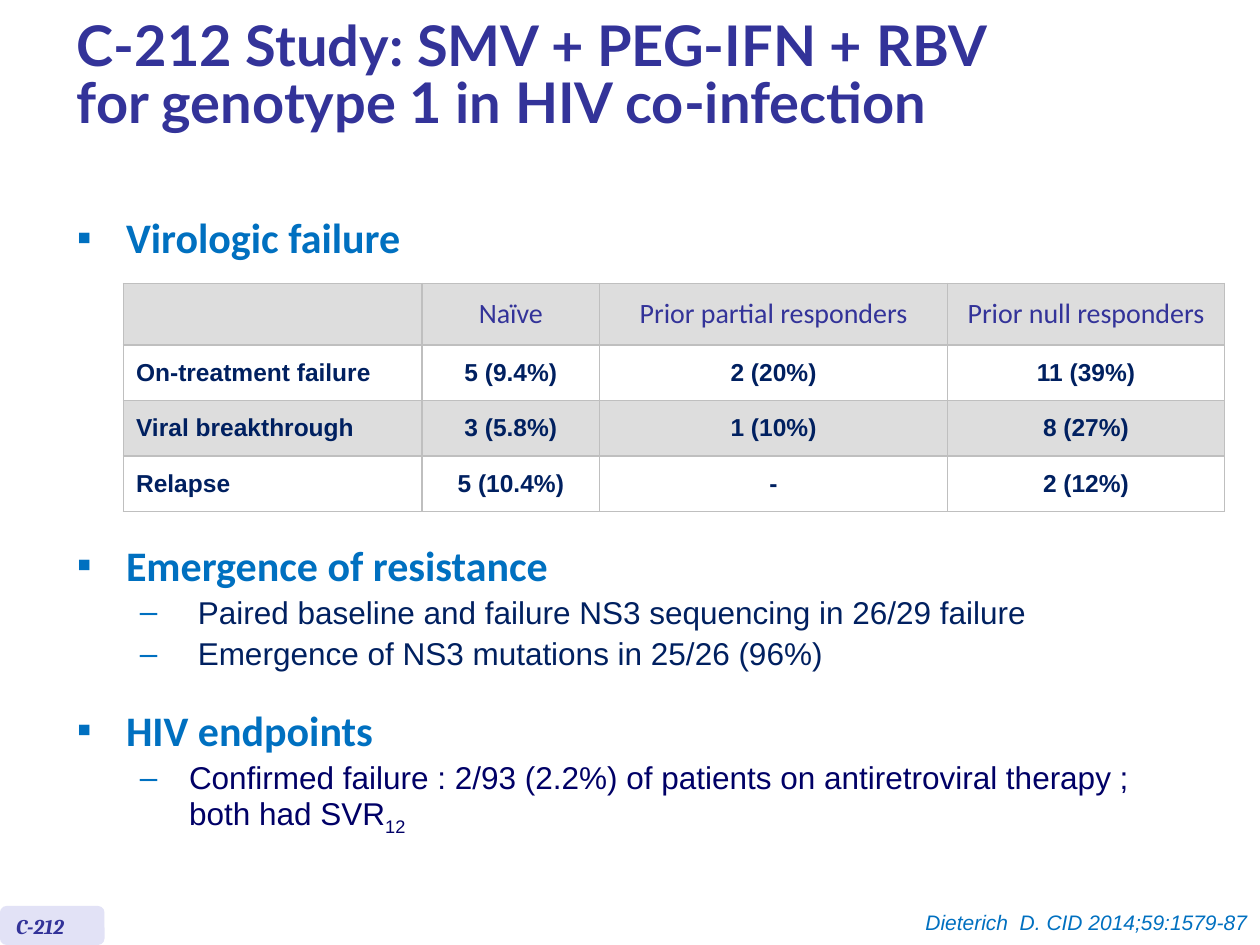
import pptx
import pptx.dml.color
import pptx.enum.shapes
import pptx.enum.text
import pptx.oxml.ns
import pptx.util
from lxml import etree

RGBColor = pptx.dml.color.RGBColor
Inches, Pt = pptx.util.Inches, pptx.util.Pt
ALIGN = pptx.enum.text.PP_ALIGN
ANCHOR = pptx.enum.text.MSO_ANCHOR

INDIGO = RGBColor(0x33, 0x33, 0x99)
BLUE = RGBColor(0x00, 0x70, 0xC0)
NAVY = RGBColor(0x00, 0x20, 0x60)
DEEP_BLUE = RGBColor(0x00, 0x00, 0x66)
LAVENDER = RGBColor(0xE2, 0xE2, 0xF6)
GREY = RGBColor(0xDD, 0xDD, 0xDD)
BORDER = RGBColor(0xBF, 0xBF, 0xBF)
WHITE = RGBColor(0xFF, 0xFF, 0xFF)

TITLE = "C-212 Study: SMV + PEG-IFN + RBV\vfor genotype 1 in HIV co-infection"
TAG = "C-212"
CITATION = "Dieterich  D. CID 2014;59:1579-87"

COLUMN_WIDTHS = [2.37, 1.41, 2.76, 2.2]
ROW_HEIGHTS = [0.49, 0.44, 0.44, 0.44]
FAILURES = [
    ["", "Naïve", "Prior partial responders", "Prior null responders"],
    ["On-treatment failure", "5 (9.4%)", "2 (20%)", "11 (39%)"],
    ["Viral breakthrough", "3 (5.8%)", "1 (10%)", "8 (27%)"],
    ["Relapse", "5 (10.4%)", "-", "2 (12%)"],
]

HEADING = dict(size=24, font="Calibri", color=BLUE, bold=True)
DETAIL = dict(size=18, font="Arial", color=NAVY)
ENDPOINT = dict(DETAIL, color=DEEP_BLUE)
LINE_PITCH = 23.6

# Each line: level, text indent, hanging indent, spans of (text, format)
FIRST_LIST = [(0, 0.39, 0.39, [("Virologic failure", HEADING)])]
SECOND_LIST = [
    (0, 0.39, 0.39, [("Emergence of resistance", HEADING)]),
    (1, 0.96, 0.46, [("Paired baseline and failure NS3 sequencing in 26/29 failure", DETAIL)]),
    (1, 0.96, 0.46, [("Emergence of NS3 mutations in 25/26 (96%)", DETAIL)]),
    (0, 0.39, 0.39, [("HIV endpoints", HEADING)]),
    (1, 0.89, 0.39, [
        ("Confirmed failure : 2/93 (2.2%) of patients on antiretroviral therapy ; both had SVR", ENDPOINT),
        ("12", dict(ENDPOINT, baseline=-25)),
    ]),
]


def write(para, text, size, font, color, bold=False, italic=False, baseline=0):
    """Append text to a paragraph; a vertical tab starts a new line."""
    for number, line in enumerate(text.split("\v")):
        if number:
            para.add_line_break()
        span = para.add_run()
        span.text = line
        span.font.size, span.font.name = Pt(size), font
        span.font.bold, span.font.italic = bold, italic
        span.font.color.rgb = color
        if baseline:
            span.font._element.set("baseline", str(baseline * 1000))


def add_element(parent, tag, **attributes):
    return etree.SubElement(parent, pptx.oxml.ns.qn(tag), **attributes)


def place(shape, left, top, width, height):
    shape.left, shape.top = Inches(left), Inches(top)
    shape.width, shape.height = Inches(width), Inches(height)


def fill_list(box, lines):
    frame = box.text_frame
    frame.auto_size = pptx.enum.text.MSO_AUTO_SIZE.NONE
    for number, (level, indent, hanging, spans) in enumerate(lines):
        para = frame.add_paragraph() if number else frame.paragraphs[0]
        para.level = level
        para.line_spacing = Pt(LINE_PITCH)
        para.space_before = Pt(LINE_PITCH if number and level == 0 else 0)
        props = para._p.get_or_add_pPr()
        props.set("marL", str(Inches(indent)))
        props.set("indent", str(-Inches(hanging)))
        add_element(add_element(props, "a:buClr"), "a:srgbClr", val=str(BLUE))
        add_element(props, "a:buFont", typeface="Arial")
        add_element(props, "a:buChar", char="–" if level else "▪")
        for text, style in spans:
            write(para, text, **style)


def add_borders(cell):
    props = cell._tc.get_or_add_tcPr()
    for position, side in enumerate(("a:lnL", "a:lnR", "a:lnT", "a:lnB")):
        line = etree.Element(pptx.oxml.ns.qn(side), w=str(Pt(1)))
        add_element(add_element(line, "a:solidFill"), "a:srgbClr", val=str(BORDER))
        props.insert(position, line)


def add_failure_table(slide, left, top):
    table = slide.shapes.add_table(
        len(FAILURES), len(COLUMN_WIDTHS), Inches(left), Inches(top),
        Inches(sum(COLUMN_WIDTHS)), Inches(sum(ROW_HEIGHTS))).table
    table.first_row = table.horz_banding = False
    for column, width in zip(table.columns, COLUMN_WIDTHS):
        column.width = Inches(width)
    for r, (row, height) in enumerate(zip(FAILURES, ROW_HEIGHTS)):
        table.rows[r].height = Inches(height)
        if r == 0:
            style = dict(size=16, font="Calibri", color=INDIGO)
        else:
            style = dict(size=14, font="Arial", color=NAVY, bold=True)
        for c, text in enumerate(row):
            cell = table.cell(r, c)
            cell.fill.solid()
            cell.fill.fore_color.rgb = WHITE if r % 2 else GREY
            cell.vertical_anchor = ANCHOR.MIDDLE
            add_borders(cell)
            para = cell.text_frame.paragraphs[0]
            para.alignment = ALIGN.CENTER if c else ALIGN.LEFT
            if text:
                write(para, text, **style)


def add_label(slide, text, area, alignment, **style):
    box = slide.shapes.add_textbox(*map(Inches, area))
    box.text_frame.word_wrap = True
    para = box.text_frame.paragraphs[0]
    para.alignment = alignment
    write(para, text, size=12, italic=True, **style)


def main():
    deck = pptx.Presentation()
    deck.slide_width, deck.slide_height = Inches(10), Inches(7.5)
    slide = deck.slides.add_slide(deck.slide_layouts.get_by_name("Two Content"))
    title, first, second = slide.placeholders

    place(title, 0.51, 0.08, 9.13, 1.07)
    title.text_frame.auto_size = pptx.enum.text.MSO_AUTO_SIZE.NONE
    title.text_frame.vertical_anchor = ANCHOR.MIDDLE
    para = title.text_frame.paragraphs[0]
    para.alignment, para.line_spacing = ALIGN.LEFT, 0.85
    write(para, TITLE, size=32, font="Lato", color=INDIGO, bold=True)

    place(first, 0.51, 1.7, 2.79, 0.44)
    fill_list(first, FIRST_LIST)
    add_failure_table(slide, 0.98, 2.25)
    place(second, 0.51, 4.3, 8.82, 2.46)
    fill_list(second, SECOND_LIST)

    tag = slide.shapes.add_shape(
        pptx.enum.shapes.MSO_SHAPE.ROUNDED_RECTANGLE,
        0, Inches(7.19), Inches(0.83), Inches(0.31))
    tag.shadow.inherit = False
    tag.fill.solid()
    tag.fill.fore_color.rgb = LAVENDER
    tag.line.fill.background()
    add_label(slide, TAG, (0.03, 7.2, 0.79, 0.3), ALIGN.LEFT,
              font="Cambria", color=INDIGO, bold=True)
    add_label(slide, CITATION, (6.81, 7.17, 3.19, 0.3), ALIGN.RIGHT,
              font="Arial", color=BLUE)
    deck.save("out.pptx")


if __name__ == "__main__":
    main()
